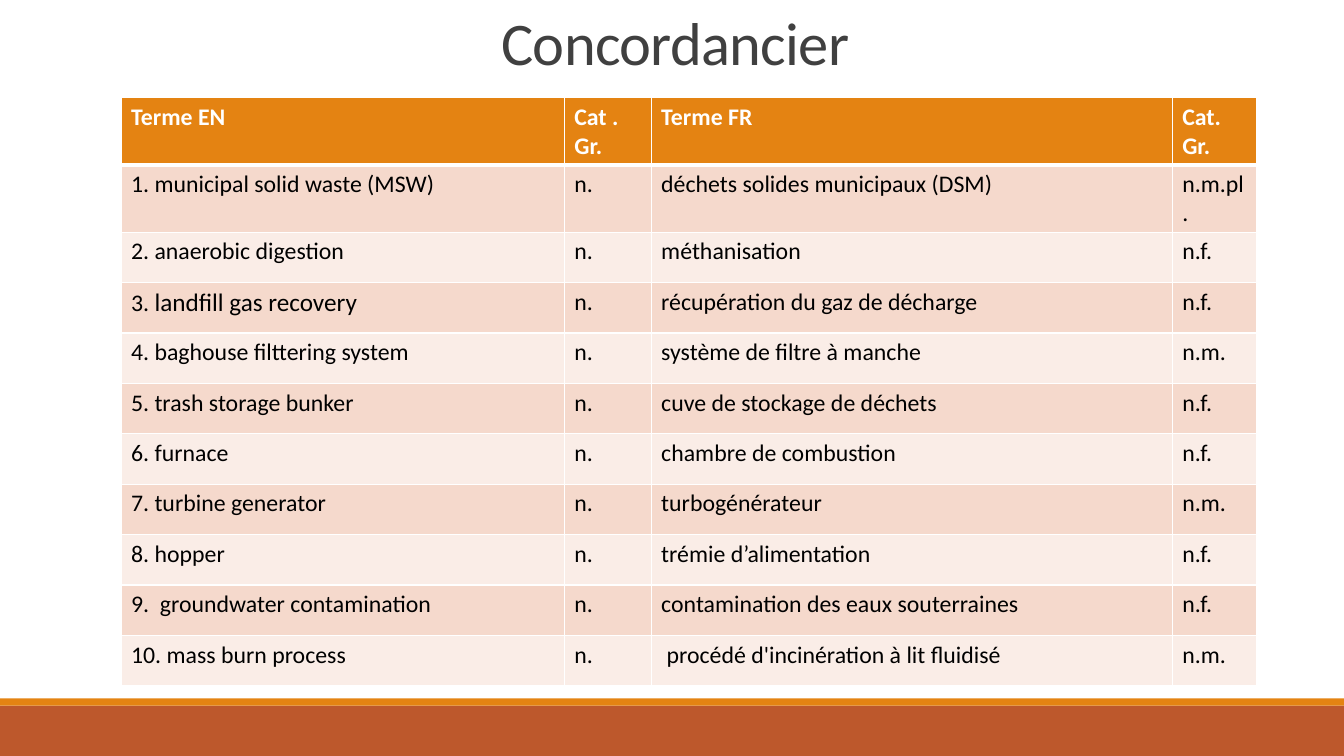
from lxml import etree
from pptx import Presentation
from pptx.dml.color import RGBColor
from pptx.enum.shapes import MSO_SHAPE
from pptx.enum.text import MSO_ANCHOR, PP_ALIGN
from pptx.oxml.ns import qn
from pptx.util import Cm, Pt

RECT = MSO_SHAPE.RECTANGLE
BOTTOM = MSO_ANCHOR.BOTTOM
CENTER = PP_ALIGN.CENTER

ORANGE, RUST, WHITE = "E48312", "BD582C", "FFFFFF"
BANDS = ["F5D9CC", "FAEDE7"]


def paint(color, text):
    color.rgb = RGBColor.from_string(text)


def write(para, text, color, form):
    run = para.add_run()
    run.text = text
    for name, value in form.items():
        setattr(run.font, name, value)
    paint(run.font.color, color)
    return run


deck = Presentation()
deck.slide_width, deck.slide_height = Cm(33.87), Cm(19.05)
slide = deck.slides.add_slide(deck.slide_layouts[6])

# Footer bands
for top, height, color in [(17.78, 1.27, RUST), (17.6, 0.18, ORANGE)]:
    band = slide.shapes.add_shape(RECT, 0, Cm(top), deck.slide_width, Cm(height))
    band.shadow.inherit = False
    band.fill.solid()
    paint(band.fill.fore_color, color)
    band.line.fill.background()

# Title
box = slide.shapes.add_textbox(Cm(3.05), Cm(0.33), Cm(27.94), Cm(1.75))
frame = box.text_frame
for name, value in {"word_wrap": True, "vertical_anchor": BOTTOM}.items():
    setattr(frame, name, value)
para = frame.paragraphs[0]
para.alignment = CENTER
para.line_spacing = 0.85
title = write(para, "Concordancier", "404040", {"name": "Calibri", "size": Pt(43.2)})
title.font._element.set("spc", "-50")

# Terms: English, French, French category
terms = [
    ("municipal solid waste (MSW)", "déchets solides municipaux (DSM)", "n.m.pl."),
    ("anaerobic digestion", "méthanisation", "n.f."),
    ("landfill gas recovery", "récupération du gaz de décharge", "n.f."),
    ("baghouse filttering system", "système de filtre à manche", "n.m."),
    ("trash storage bunker", "cuve de stockage de déchets", "n.f."),
    ("furnace", "chambre de combustion", "n.f."),
    ("turbine generator", "turbogénérateur", "n.m."),
    ("hopper", "trémie d’alimentation", "n.f."),
    (" groundwater contamination", "contamination des eaux souterraines", "n.f."),
    ("mass burn process", " procédé d'incinération à lit fluidisé", "n.m."),
]
rows = [("Terme EN", "Cat . Gr.", "Terme FR", "Cat. Gr.")]
for num, (en, fr, cat) in enumerate(terms, 1):
    rows.append((f"{num}. {en}", "n.", fr, cat))

# Table grid
widths = [11.17, 2.19, 13.13, 2.12]
heights = [1.68] * 2 + [1.27] * 9
grid = slide.shapes.add_table(
    len(rows), len(widths), Cm(3.05), Cm(2.46), Cm(sum(widths)), Cm(sum(heights))
).table
grid.horz_banding = False
for col, width in zip(grid.columns, widths):
    col.width = Cm(width)
for row, height in zip(grid.rows, heights):
    row.height = Cm(height)

# Cells, with a thick rule under the header
for r, row in enumerate(rows):
    for c, text in enumerate(row):
        cell = grid.cell(r, c)
        props = cell._tc.get_or_add_tcPr()
        for side in ["lnL", "lnR", "lnT", "lnB"]:
            thick = (r, side) in [(0, "lnB"), (1, "lnT")]
            edge = etree.SubElement(props, qn("a:" + side), w=str(Pt(3 if thick else 1)))
            solid = etree.SubElement(edge, qn("a:solidFill"))
            etree.SubElement(solid, qn("a:srgbClr"), val=WHITE)
        cell.fill.solid()
        paint(cell.fill.fore_color, BANDS[(r - 1) % 2] if r else ORANGE)

        form = {"name": "Calibri", "size": Pt(17), "bold": r == 0}
        color = "000000" if r else WHITE
        para = cell.text_frame.paragraphs[0]
        if (r, c) == (3, 0):
            write(para, text[:3], color, form)
            write(para, text[3:], color, form | {"size": Pt(18)})
        else:
            write(para, text, color, form)

deck.save("out.pptx")
